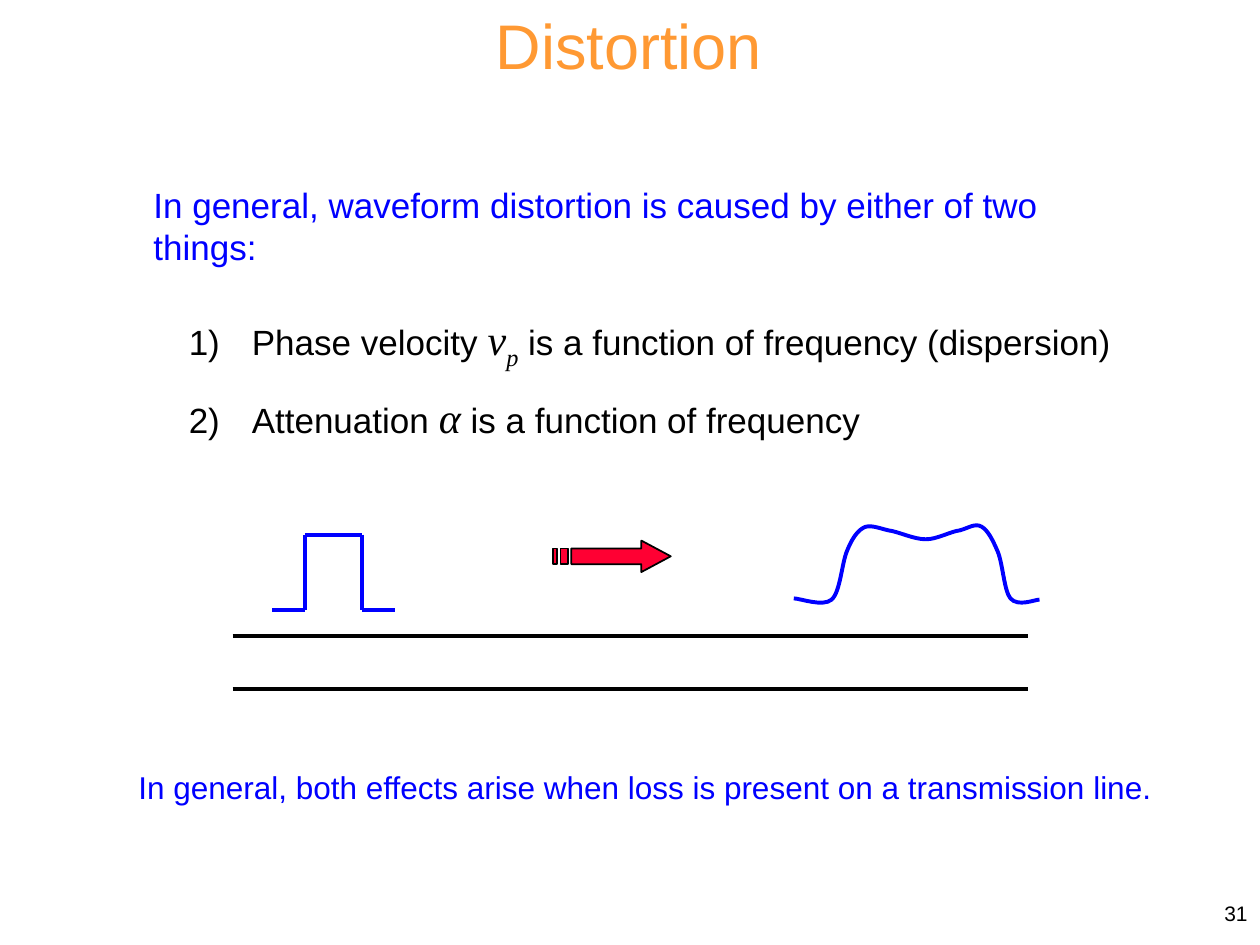
from lxml import etree
from pptx import Presentation
from pptx.dml.color import RGBColor
from pptx.enum import shapes, text
from pptx.oxml import ns
from pptx.util import Pt

BLUE, BLACK, ORANGE, RED = "0000FF", "000000", "FF9933", "FF0033"
SANS, SERIF = "Arial", "Times New Roman"


def colour(value):
    """Turn a hex string into a colour."""
    return RGBColor.from_string(value)


def add_span(para, words, size, tint, font=SANS, italic=False, baseline=0):
    """Append one formatted run to a paragraph."""
    span = para.add_run()
    span.text = words
    span.font.name, span.font.size, span.font.italic = font, Pt(size), italic
    span.font.color.rgb = colour(tint)
    if baseline:
        span.font._element.set("baseline", str(baseline * 1000))


def add_frame(page, box, anchor=text.MSO_ANCHOR.TOP):
    """Add an empty wrapping text box and return its frame."""
    frame = page.shapes.add_textbox(*map(Pt, box)).text_frame
    frame.word_wrap = True
    frame.vertical_anchor = anchor
    return frame


def add_label(page, box, words, size, tint, align=text.PP_ALIGN.LEFT, anchor=text.MSO_ANCHOR.TOP):
    """Add a text box holding one line of text."""
    para = add_frame(page, box, anchor).paragraphs[0]
    para.alignment = align
    add_span(para, words, size, tint)


def add_causes(page, box):
    """Add the numbered causes of distortion."""
    symbol = {"size": 24, "font": SERIF, "italic": True}
    plain = {"size": 20}
    causes = [
        [("Phase velocity ", plain), ("v", symbol), ("p", symbol | {"baseline": -25}),
         (" is a function of frequency (dispersion)", plain)],
        [("Attenuation ", plain), ("α", symbol), (" is a function of frequency", plain)],
    ]
    frame = add_frame(page, box)
    for index, spans in enumerate(causes):
        para = frame.add_paragraph() if index else frame.paragraphs[0]
        para.space_after = Pt(12)
        properties = para._p.get_or_add_pPr()
        properties.set("marL", str(Pt(36)))
        properties.set("indent", str(-Pt(36)))
        etree.SubElement(properties, ns.qn("a:buFont"), typeface=SANS)
        etree.SubElement(properties, ns.qn("a:buAutoNum"), type="arabicParenR")
        for words, style in spans:
            add_span(para, words, tint=BLACK, **style)


def add_line(page, start, end, tint):
    """Add a straight line without a shadow."""
    line = page.shapes.add_connector(shapes.MSO_CONNECTOR.STRAIGHT, *map(Pt, start + end))
    line.line.color.rgb = colour(tint)
    line.line.width = Pt(2.25)
    etree.SubElement(line._element.spPr, ns.qn("a:effectLst"))


def add_outline(page, box, contours, closed, tint, width, fill=None):
    """Draw contours, given relative to the box, as one freeform."""
    left, top = box[:2]
    builder = None
    for contour in contours:
        start, *rest = [(Pt(left + x), Pt(top + y)) for x, y in contour]
        if builder is None:
            builder = page.shapes.build_freeform(*start)
        else:
            builder.move_to(*start)
        builder.add_line_segments(rest, close=closed)
    outline = builder.convert_to_shape()
    outline.shadow.inherit = False
    outline.line.color.rgb = colour(tint)
    outline.line.width = Pt(width)
    if fill:
        outline.fill.solid()
        outline.fill.fore_color.rgb = colour(fill)
    else:
        outline.fill.background()
    return outline


def add_transmission_line(page, box):
    """Draw the two conductors along the top and bottom of the box."""
    left, top, width, height = box
    for y in (top, top + height):
        add_line(page, (left, y), (left + width, y), BLACK)


def add_input_pulse(page, box):
    """Draw the square pulse from five straight lines."""
    left, top, width, height = box
    right, bottom = left + width, top + height
    rise, fall = left + 18.7, right - 18.4
    corners = [(left, bottom), (rise, bottom), (rise, top), (fall, top), (fall, bottom), (right, bottom)]
    for start, end in zip(corners, corners[1:]):
        add_line(page, start, end, BLUE)


def add_arrow(page, box):
    """Draw the striped arrow pointing right."""
    width, height = box[2:]
    upper, lower, neck = height / 4, height * 3 / 4, width - 16.8
    head = [(neck, 0), (neck, upper), (10.4, upper), (10.4, lower),
            (neck, lower), (neck, height), (width, height / 2)]
    stripes = [[(a, upper), (a, lower), (b, lower), (b, upper)] for a, b in ((4.2, 8.4), (0, 2.1))]
    add_outline(page, box, [head, *stripes], True, BLACK, 1, RED)


def add_output_pulse(page, box):
    """Draw the distorted pulse as a chain of cubic curves."""
    points = [(0, 43.2), (3.6, 43.2), (16.6, 48.2), (21.6, 43.9), (26.6, 39.6), (27.4, 23),
              (30.5, 15.9), (33.1, 9.4), (36, 5), (39.6, 2.9), (43.2, 0.7), (48.2, 2.9),
              (54, 4.3), (59.8, 5), (68.4, 9.4), (75.4, 9.4), (82, 9.4), (89.3, 5),
              (94.9, 4.3), (100, 2.9), (103.7, 0), (107.3, 2.2), (111, 4.3), (113.8, 10),
              (116.6, 16.6), (119.5, 23.8), (120.2, 38.9), (123.8, 43.2), (128.2, 48.2),
              (137.5, 43.9), (140.4, 43.9)]
    curve = add_outline(page, box, [points], False, BLUE, 2.25)
    segments = curve._element.xpath(".//a:lnTo")
    for first in range(0, len(segments), 3):
        group = segments[first:first + 3]
        bend = etree.Element(ns.qn("a:cubicBezTo"))
        group[0].addprevious(bend)
        for segment in group:
            bend.append(segment[0])
            segment.getparent().remove(segment)


def main():
    """Build the distortion slide."""
    deck = Presentation()
    deck.slide_width, deck.slide_height = Pt(720), Pt(540)
    page = deck.slides.add_slide(deck.slide_layouts[6])
    add_label(page, (80.6, 101.5, 583.2, 31),
              "In general, waveform distortion is caused by either of two things:", 20, BLUE)
    add_label(page, (113.8, 0, 491, 50.4), "Distortion", 36, ORANGE, text.PP_ALIGN.CENTER)
    add_causes(page, (100.8, 175.7, 554.4, 117.4))
    add_transmission_line(page, (132.9, 363.5, 454.5, 30.4))
    add_input_pulse(page, (155.5, 305.5, 70, 43))
    add_output_pulse(page, (453.6, 298.8, 140.4, 48.2))
    add_arrow(page, (316.1, 308.9, 67.2, 18))
    add_label(page, (72, 435.6, 598.3, 28.8),
              "In general, both effects arise when loss is present on a transmission line.", 18, BLUE)
    add_label(page, (570.2, 504, 149.8, 36), "31", 12, BLACK,
              text.PP_ALIGN.RIGHT, text.MSO_ANCHOR.MIDDLE)
    deck.save("out.pptx")


if __name__ == "__main__":
    main()
